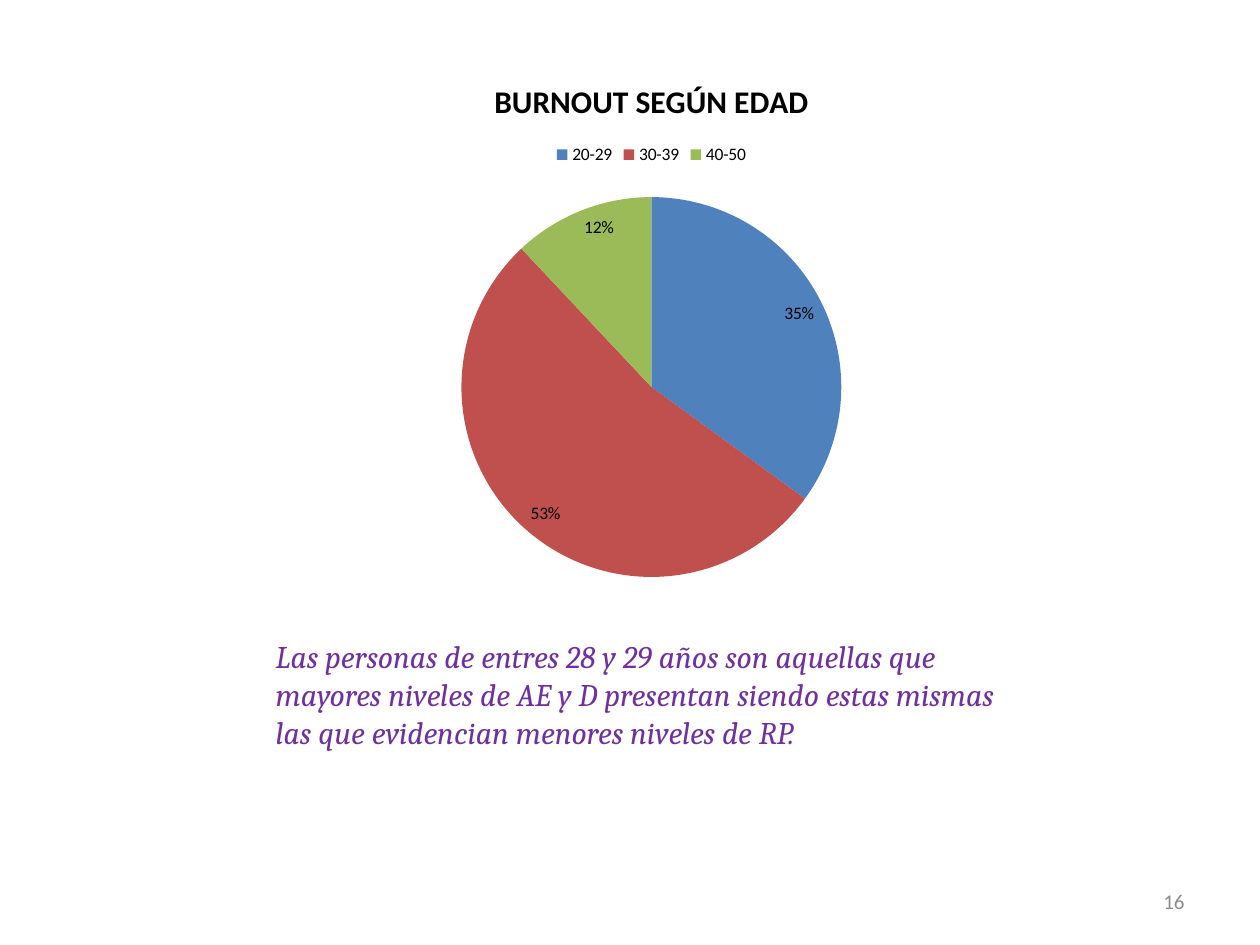
from lxml import etree
from pptx import Presentation
from pptx.chart.data import CategoryChartData
from pptx.dml.color import RGBColor
from pptx.enum.chart import XL_CHART_TYPE, XL_LABEL_POSITION, XL_LEGEND_POSITION
from pptx.enum.text import MSO_ANCHOR, PP_ALIGN
from pptx.oxml.ns import qn
from pptx.util import Pt

PIE = XL_CHART_TYPE.PIE
INSIDE_END = XL_LABEL_POSITION.INSIDE_END
TOP_LEGEND = XL_LEGEND_POSITION.TOP
ANCHOR_TOP, ANCHOR_MIDDLE = MSO_ANCHOR.TOP, MSO_ANCHOR.MIDDLE
LEFT, RIGHT = PP_ALIGN.LEFT, PP_ALIGN.RIGHT

AGES = {"20-29": (35, "4F81BD"), "30-39": (53, "C0504D"), "40-50": (12, "9BBB59")}
COMMENT = ("Las personas de entres 28 y 29 años son aquellas que mayores niveles "
           "de AE y D presentan siendo estas mismas las que evidencian menores "
           "niveles de RP.")


def rgb(value):
    return RGBColor.from_string(value)


def style_font(font, name, size, color, bold=False, italic=False):
    font.name, font.size = name, Pt(size)
    font.color.rgb = rgb(color)
    font.bold, font.italic = bold, italic


def set_plot_layout(chart, x, y, w, h):
    """Fix the inner plot area, in fractions of the chart."""
    plot_area = chart.element.find(".//" + qn("c:plotArea"))
    for old in plot_area.findall(qn("c:layout")):
        plot_area.remove(old)
    layout = etree.Element(qn("c:layout"))
    manual = etree.SubElement(layout, qn("c:manualLayout"))
    settings = {"layoutTarget": "inner", "xMode": "edge", "yMode": "edge",
                "x": x, "y": y, "w": w, "h": h}
    for tag, value in settings.items():
        etree.SubElement(manual, qn("c:" + tag)).set("val", str(value))
    plot_area.insert(0, layout)


def add_age_chart(slide, box):
    data = CategoryChartData()
    data.categories = list(AGES)
    data.add_series("Burnout", [value for value, _ in AGES.values()])
    chart = slide.shapes.add_chart(PIE, *map(Pt, box), data).chart
    style_font(chart.font, "Calibri", 10, "000000")

    # Title and legend
    chart.has_title = True
    tf = chart.chart_title.text_frame
    tf.text = "BURNOUT SEGÚN EDAD"
    style_font(tf.paragraphs[0].runs[0].font, "Calibri", 18, "000000", bold=True)
    chart.has_legend = True
    chart.legend.position = TOP_LEGEND
    chart.legend.include_in_layout = False

    # Slices and percentages
    plot = chart.plots[0]
    plot.vary_by_categories = True
    for i, (_, color) in enumerate(AGES.values()):
        fill = plot.series[0].points[i].format.fill
        fill.solid()
        fill.fore_color.rgb = rgb(color)
    plot.has_data_labels = True
    labels = plot.data_labels
    labels.show_percentage, labels.show_value = True, False
    labels.number_format, labels.number_format_is_linked = "0%", False
    labels.position = INSIDE_END
    set_plot_layout(chart, 0.09, 0.25, 0.82, 0.67)


def add_text(slide, box, text, font, align=LEFT, anchor=ANCHOR_TOP, before=0):
    tf = slide.shapes.add_textbox(*map(Pt, box)).text_frame
    tf.word_wrap = True
    tf.vertical_anchor = anchor
    tf.text = text
    p = tf.paragraphs[0]
    p.alignment, p.space_before = align, Pt(before)
    style_font(p.runs[0].font, **font)


def main():
    prs = Presentation()
    prs.slide_width, prs.slide_height = Pt(720), Pt(540)
    slide = prs.slides.add_slide(prs.slide_layouts[6])

    # Comment under the chart
    add_text(slide, (150.5, 360.7, 432, 126), COMMENT,
             dict(name="Cambria", size=18, color="7030A0", italic=True), before=3.6)
    # Page number
    add_text(slide, (516, 500.5, 168, 28.75), "16",
             dict(name="Calibri", size=12, color="8C8C8C"), RIGHT, ANCHOR_MIDDLE)
    add_age_chart(slide, (156.25, 31.7, 432, 324))

    prs.save("out.pptx")


if __name__ == "__main__":
    main()
